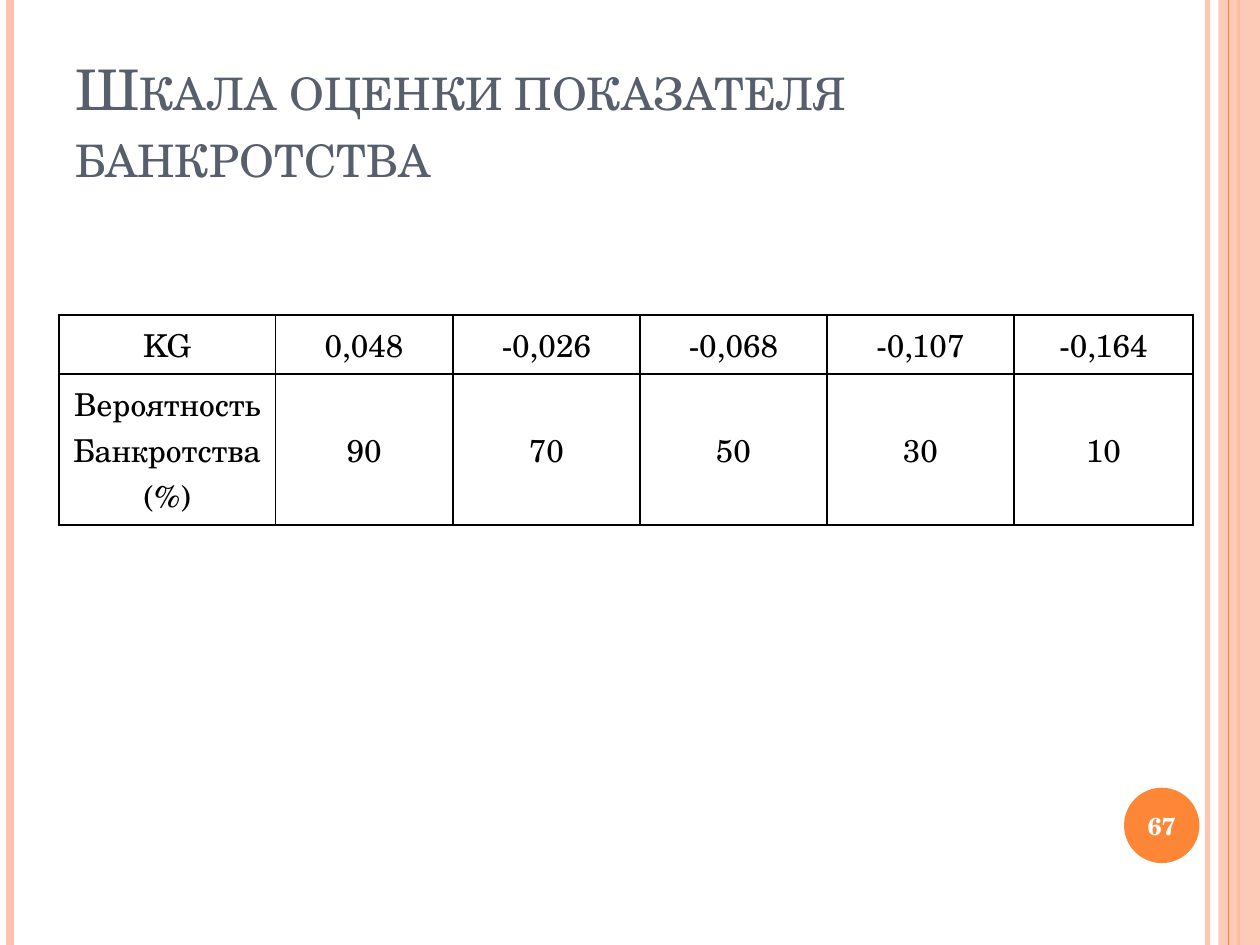
from pptx import Presentation
from pptx.dml.color import RGBColor
from pptx.enum.shapes import MSO_CONNECTOR as Link, MSO_SHAPE as Shape
from pptx.enum.text import MSO_ANCHOR as Anchor, PP_ALIGN as Align
from pptx.oxml.ns import qn
from pptx.util import Cm, Pt
from lxml.etree import SubElement as Sub

FONT = "TeX Gyre Schola"
PINK, ORANGE, SLATE, BLACK, WHITE = "FEC3AE", "FE8637", "575F6D", "000000", "FFFFFF"
ROWS = [
    ["KG", "0,048", "-0,026", "-0,068", "-0,107", "-0,164"],
    ["Вероятность\nБанкротства\n(%)", "90", "70", "50", "30", "10"],
]
WIDTHS = [4.36, 3.58, 3.77, 3.77, 3.77, 3.61]
HEIGHTS = [1.19, 3.04]


def paint(fmt, hue, alpha=100):
    """Set a solid fill, with opacity in percent."""
    fmt.solid()
    fmt.fore_color.rgb = RGBColor.from_string(hue)
    if alpha < 100:
        for node in fmt._xPr.iter(qn("a:srgbClr")):
            Sub(node, qn("a:alpha"), val=str(alpha * 1000))


def style(frame, size, hue, align, bold=False):
    """Format every run in a text frame."""
    for para in frame.paragraphs:
        para.alignment = align
        for run in para.runs:
            run.font.name, run.font.size, run.font.bold = FONT, Pt(size), bold
            paint(run.font.fill, hue)


def add_text(slide, box, text, size, hue, align, anchor, bold=False):
    """Place a wrapped text box and return its frame."""
    frame = slide.shapes.add_textbox(*map(Cm, box)).text_frame
    frame.word_wrap, frame.vertical_anchor = True, anchor
    frame.text = text
    style(frame, size, hue, align, bold)
    return frame


def add_rule(slide, x, top, height, hue, width, alpha=100):
    """Draw one vertical line."""
    rule = slide.shapes.add_connector(Link.STRAIGHT, Cm(x), Cm(top), Cm(x), Cm(top + height))
    rule.line.width = Pt(width)
    paint(rule.line.fill, hue, alpha)
    Sub(rule._element.spPr, qn("a:effectLst"))


def add_solid(slide, kind, box, hue, alpha=100):
    """Place a filled shape without outline."""
    shape = slide.shapes.add_shape(kind, *map(Cm, box))
    shape.shadow.inherit = False
    shape.line.fill.background()
    paint(shape.fill, hue, alpha)


def add_frame(slide, left, top, width, height):
    """Draw the stripes along both edges of the slide."""
    right = left + width
    add_rule(slide, right - 1.06, top, height, PINK, 3, 93)
    add_rule(slide, left + 0.21, top, height, PINK, 4.5)
    add_rule(slide, right - 0.43, top, height, ORANGE, 1.5)
    add_solid(slide, Shape.RECTANGLE, (right - 0.84, top, 0.84, height), PINK, 87)
    add_rule(slide, right - 0.64, top, height, ORANGE, 0.75)


def add_title(slide, *box):
    """Place the heading in small capitals."""
    frame = add_text(slide, box, "Шкала оценки показателя банкротства", 32, SLATE,
                     Align.LEFT, Anchor.BOTTOM)
    frame.paragraphs[0].runs[0].font._element.set("cap", "small")


def add_badge(slide, left, top, size):
    """Place the round page number."""
    box = left, top, size, size
    add_solid(slide, Shape.OVAL, box, ORANGE)
    add_text(slide, box, "67", 14, WHITE, Align.CENTER, Anchor.MIDDLE, True)


def edge(cell):
    """Give a cell thin black borders and no fill."""
    props = cell._tc.get_or_add_tcPr()
    for side in ("lnL", "lnR", "lnT", "lnB"):
        line = Sub(props, qn("a:" + side), w=str(Pt(1)))
        Sub(Sub(line, qn("a:solidFill")), qn("a:srgbClr"), val=BLACK)
    cell.fill.background()


def add_scale(slide, left, top):
    """Place the bankruptcy scale table."""
    size = sum(WIDTHS), sum(HEIGHTS)
    table = slide.shapes.add_table(len(HEIGHTS), len(WIDTHS), Cm(left), Cm(top),
                                   *map(Cm, size)).table
    table.first_row = table.horz_banding = False
    for col, width in zip(table.columns, WIDTHS):
        col.width = Cm(width)
    for row, height, texts in zip(table.rows, HEIGHTS, ROWS):
        row.height = Cm(height)
        for cell, text in zip(row.cells, texts):
            cell.text_frame.text = text
            cell.vertical_anchor = Anchor.MIDDLE
            style(cell.text_frame, 18, BLACK, Align.CENTER)
            edge(cell)


def main():
    """Build and save the slide."""
    deck = Presentation()
    deck.slide_width, deck.slide_height = Cm(25.4), Cm(19.05)
    slide = deck.slides.add_slide(deck.slide_layouts[6])
    add_frame(slide, 0, 0, 25.4, 19.05)
    add_title(slide, 1.27, 0.76, 22.83, 3.18)
    add_scale(slide, 1.19, 6.35)
    add_badge(slide, 22.66, 15.88, 1.52)
    deck.save("out.pptx")


if __name__ == "__main__":
    main()
